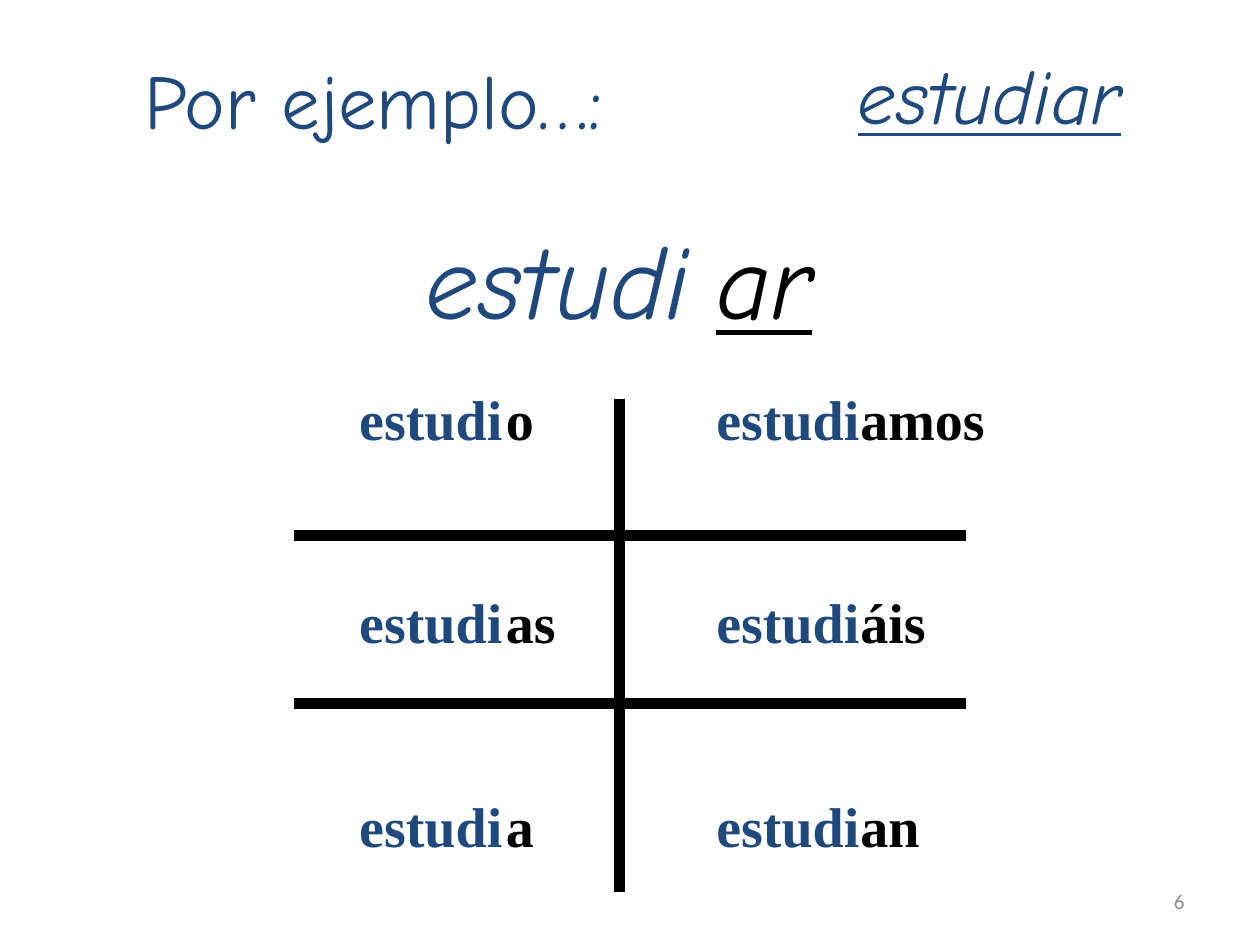
import pptx
import pptx.util
import pptx.dml.color
import pptx.enum.text
import pptx.oxml.ns
import lxml.etree

Pt = pptx.util.Pt
Align = pptx.enum.text.PP_ALIGN
Anchor = pptx.enum.text.MSO_ANCHOR
Fit = pptx.enum.text.MSO_AUTO_SIZE


def color(code):
    return pptx.dml.color.RGBColor.from_string(code)


class Page:
    blue = "1F497D"
    black = "000000"
    gray = "8C8C8C"
    hand = "Comic Neue"
    serif = "Times New Roman"
    sans = "Calibri"

    def __init__(self, deck):
        self.slide = deck.slides.add_slide(deck.slide_layouts[6])

    def text(self, box, lines, face, size, code, align=Align.LEFT, gap=0,
             bold=False, italic=False, under=False, anchor=Anchor.TOP):
        frame = self.slide.shapes.add_textbox(*map(Pt, box)).text_frame
        frame.word_wrap = False
        frame.auto_size = Fit.SHAPE_TO_FIT_TEXT
        frame.vertical_anchor = anchor
        frame.text = "\n".join(lines)
        for row, para in enumerate(frame.paragraphs):
            para.alignment = align
            para.space_before = Pt(gap if row else 0)
            font = para.font
            font.name = face
            font.size = Pt(size)
            font.bold = bold
            font.italic = italic
            font.underline = under
            font.color.rgb = color(code)

    def title(self, box, word, size, code, align, italic=True, under=False):
        self.text(box, [word], self.hand, size, code, align,
                  italic=italic, under=under)

    def forms(self, left, width, words, code, align):
        self.text((left, 216, width, 276), words, self.serif, 32, code,
                  align, gap=78, bold=True)

    def line(self, *ends):
        line = self.slide.shapes.add_connector(
            pptx.enum.shapes.MSO_CONNECTOR.STRAIGHT, *map(Pt, ends))
        line.line.color.rgb = color(self.black)
        line.line.width = Pt(6)
        lxml.etree.SubElement(line._element.spPr,
                              pptx.oxml.ns.qn("a:effectLst"))


def main():
    deck = pptx.Presentation()
    deck.slide_width, deck.slide_height = Pt(720), Pt(540)
    page = Page(deck)

    page.text((516, 500.5, 168, 28.75), ["6"], page.sans, 12, page.gray,
              Align.RIGHT, anchor=Anchor.MIDDLE)
    page.title((75.6, 26.6, 296.6, 60), "Por ejemplo…:", 44, page.blue,
               Align.LEFT, italic=False)
    page.title((462.2, 23.8, 185.8, 60), "estudiar", 44, page.blue,
               Align.RIGHT, under=True)
    page.title((224.6, 118.8, 188, 79), "estudi", 60, page.blue,
               Align.CENTER)
    page.title((399.6, 118.8, 74, 79), "ar", 60, page.black,
               Align.CENTER, under=True)

    for left in (198, 402):
        page.forms(left, 96.5, ["estudi"] * 3, page.blue, Align.CENTER)
    page.line(354, 228, 354, 510)
    for top in (306, 402):
        page.line(168, top, 552, top)
    page.forms(282, 43, ["o", "as", "a"], page.black, Align.LEFT)
    page.forms(484.5, 85.7, ["amos", "áis", "an"], page.black, Align.LEFT)

    deck.save("out.pptx")


if __name__ == "__main__":
    main()
